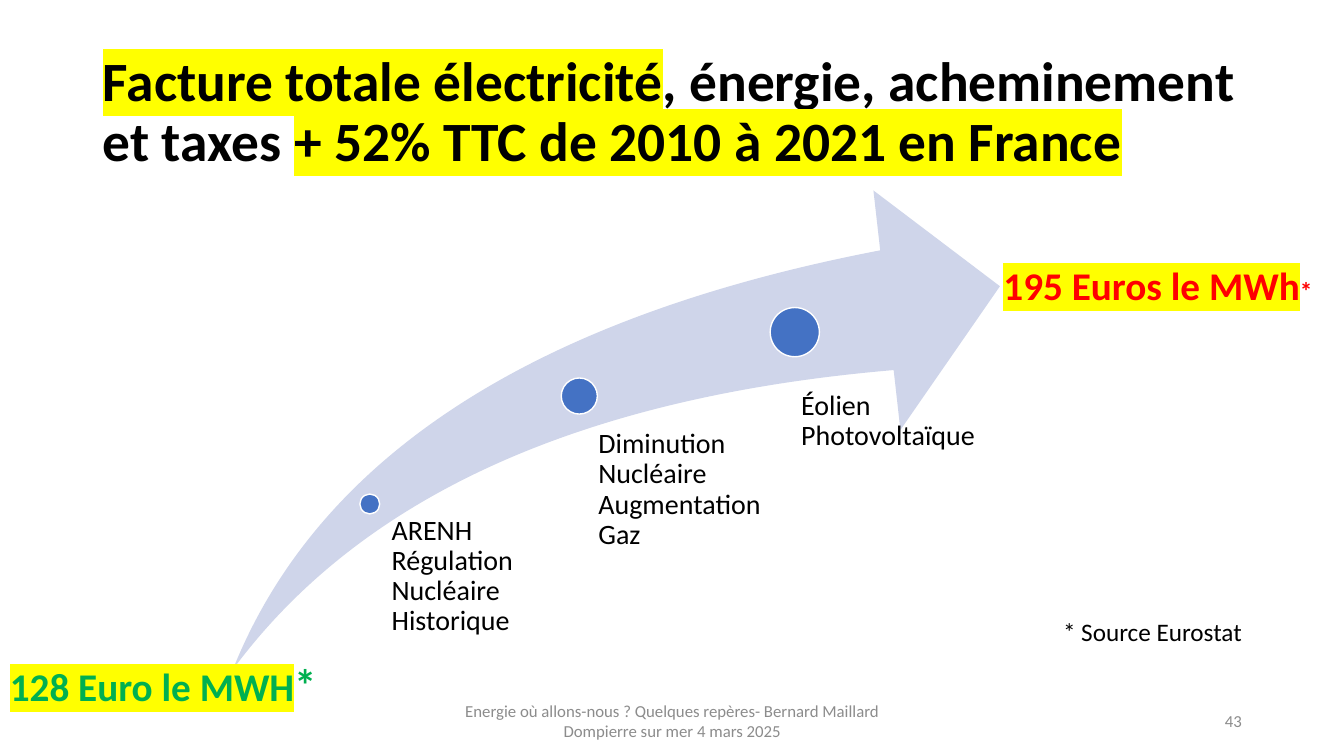
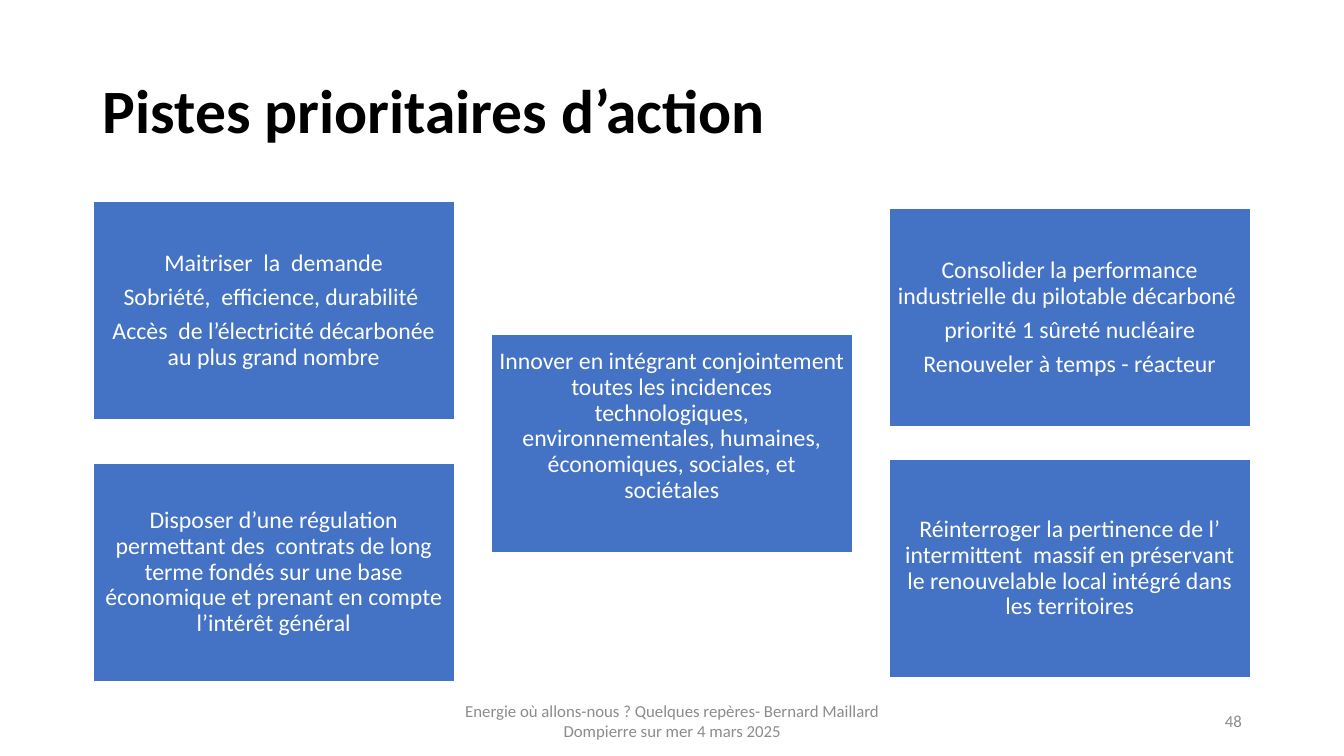
import dataclasses

import lxml.etree
import pptx
import pptx.dml.color
import pptx.enum.shapes
import pptx.enum.text
import pptx.oxml.ns
import pptx.util

Cm = pptx.util.Cm
Pt = pptx.util.Pt
ALIGN = pptx.enum.text.PP_ALIGN
ANCHOR = pptx.enum.text.MSO_ANCHOR
SHAPE = pptx.enum.shapes.MSO_SHAPE


@dataclasses.dataclass(frozen=True)
class Theme:
    font: str = "Calibri"
    black: str = "000000"
    white: str = "FFFFFF"
    blue: str = "4472C4"
    pale: str = "CFD5EA"
    grey: str = "8C8C8C"
    green: str = "00B050"
    red: str = "FF0000"
    yellow: str = "FFFF00"
    title: float = 44
    long_title: float = 39.6
    price: float = 28
    label: float = 20
    note: float = 18
    box: float = 17
    foot: float = 12


THEME = Theme()
FOOTER = "Energie où allons-nous ? Quelques repères- Bernard Maillard\vDompierre sur mer 4 mars 2025"
LEFT = 2.34
BOX_W, BOX_H, BOX_GAP = 9.12, 5.49, 0.91


def rgb(code):
    return pptx.dml.color.RGBColor.from_string(code)


# Text
def style(run, size, color, bold=False, marked=False):
    font = run.font
    font.size, font.bold, font.name = Pt(size), bold, THEME.font
    font.color.rgb = rgb(color)
    if marked:
        qn = pptx.oxml.ns.qn
        light = lxml.etree.Element(qn("a:highlight"))
        lxml.etree.SubElement(light, qn("a:srgbClr"), val=THEME.yellow)
        run._r.rPr.find(qn("a:solidFill")).addnext(light)


def write(frame, text, size, color, bold=False, align=ALIGN.LEFT, space=None, after=0):
    frame.text = text
    for line in frame.paragraphs:
        line.alignment = align
        line.line_spacing = space
        line.space_after = Pt(after)
        for run in line.runs:
            style(run, size, color, bold)


def write_parts(frame, parts, color, space=None):
    """Write one bold line from (text, size, marked) parts."""
    line = frame.paragraphs[0]
    line.line_spacing = space
    for text, size, marked in parts:
        run = line.add_run()
        run.text = text
        style(run, size, color, True, marked)


def set_frame(frame, insets, anchor, wrap=True):
    frame.word_wrap, frame.vertical_anchor = wrap, anchor
    frame.margin_left, frame.margin_top, frame.margin_right, frame.margin_bottom = map(Cm, insets)


def add_text(slide, place, anchor=ANCHOR.TOP, insets=(0.25, 0.13, 0.25, 0.13), wrap=True):
    frame = slide.shapes.add_textbox(*map(Cm, place)).text_frame
    set_frame(frame, insets, anchor, wrap)
    return frame


# Shapes
def add_shape(slide, kind, place, fill, line=None):
    shape = slide.shapes.add_shape(kind, *map(Cm, place))
    shape.shadow.inherit = False
    shape.fill.solid()
    shape.fill.fore_color.rgb = rgb(fill)
    if line:
        shape.line.color.rgb = rgb(line)
        shape.line.width = Pt(1)
    else:
        shape.line.fill.background()
    return shape


def add_dot(slide, x, y, size):
    place = (x - size / 2, y - size / 2, size, size)
    add_shape(slide, SHAPE.OVAL, place, THEME.blue, THEME.white)


def add_label(slide, place, indent, text):
    frame = add_text(slide, place, insets=(indent, 0, 0, 0))
    write(frame, text, THEME.label, THEME.black, space=0.9)


def add_box(slide, column, top, text, lift=0):
    left = LEFT + column * (BOX_W + BOX_GAP)
    box = add_shape(slide, SHAPE.RECTANGLE, (left, top, BOX_W, BOX_H), THEME.blue, THEME.white)
    set_frame(box.text_frame, (0.18, 0.18, 0.18, 0.18 + lift), ANCHOR.MIDDLE)
    write(box.text_frame, text, THEME.box, THEME.white, align=ALIGN.CENTER, space=0.9, after=6)


# Shared title and footer
def add_slide(deck, title, number):
    slide = deck.slides.add_slide(deck.slide_layouts[6])
    frame = add_text(slide, (LEFT, 1.02, 29.21, 3.68), ANCHOR.MIDDLE)
    write_parts(frame, title, THEME.black, 0.9)
    for left, width, text, align in (
        (11.23, 11.43, FOOTER, ALIGN.CENTER),
        (23.93, 7.62, number, ALIGN.RIGHT),
    ):
        frame = add_text(slide, (left, 17.65, width, 1.02), ANCHOR.MIDDLE)
        write(frame, text, THEME.foot, THEME.grey, align=align)
    return slide


def add_bill(deck):
    size = THEME.long_title
    title = [
        ("Facture totale électricité", size, True),
        (", énergie, acheminement et taxes ", size, False),
        ("+ 52% TTC de 2010 à 2021 en France", size, True),
    ]
    slide = add_slide(deck, title, "43")

    # Rising arrow with its stages
    arrow = add_shape(slide, SHAPE.SWOOSH_ARROW, (5.87, 4.8, 19.33, 12.07), THEME.pale)
    arrow.adjustments[0] = arrow.adjustments[1] = 0.25
    for dot, place, indent, text in (
        ((9.32, 12.7, 0.5), (9.6, 13, 4.22, 3.56), 0.27, "ARENH Régulation Nucléaire Historique"),
        ((14.6, 9.98, 0.91), (14.6, 10.82, 4.65, 2.97), 0.48, "Diminution Nucléaire Augmentation Gaz"),
        ((20.03, 8.37, 1.24), (19.53, 9.86, 5.49, 6.93), 0.66, "Éolien Photovoltaïque"),
    ):
        add_dot(slide, *dot)
        add_label(slide, place, indent, text)

    # Prices at both ends and the source
    for place, color, text, star, wrap in (
        ((0, 16.41, 11.71, 1.63), THEME.green, "128 Euro le MWH", 32, True),
        ((25.04, 6.45, 8.38, 1.45), THEME.red, "195 Euros le MWh", 18, False),
    ):
        frame = add_text(slide, place, wrap=wrap)
        write_parts(frame, [(text, THEME.price, True), ("*", star, False)], color)
    frame = add_text(slide, (26.54, 15.39, 5.08, 1.02), wrap=False)
    write(frame, "* Source Eurostat", THEME.note, THEME.black)


def add_plan(deck):
    slide = add_slide(deck, [("Pistes prioritaires d’action", THEME.title, False)], "48")
    add_box(slide, 0, 5.08, "Maitriser  la  demande\nSobriété,  efficience, durabilité \n"
            "Accès  de l’électricité décarbonée au plus grand nombre")
    add_box(slide, 0, 11.68, "Disposer d’une régulation permettant des  contrats de long terme "
            "fondés sur une base économique et prenant en compte l’intérêt général")
    add_box(slide, 1, 8.43, "Innover en intégrant conjointement toutes les incidences technologiques, "
            "environnementales, humaines, économiques, sociales, et sociétales", lift=0.87)
    add_box(slide, 2, 5.26, "Consolider la performance industrielle du pilotable décarboné \n"
            "priorité 1 sûreté nucléaire\nRenouveler à temps - réacteur")
    add_box(slide, 2, 11.58, "Réinterroger la pertinence de l’ intermittent  massif en préservant "
            "le renouvelable local intégré dans les territoires")


def main():
    deck = pptx.Presentation()
    deck.slide_width, deck.slide_height = Cm(33.87), Cm(19.05)
    add_bill(deck)
    add_plan(deck)
    deck.save("out.pptx")


if __name__ == "__main__":
    main()
